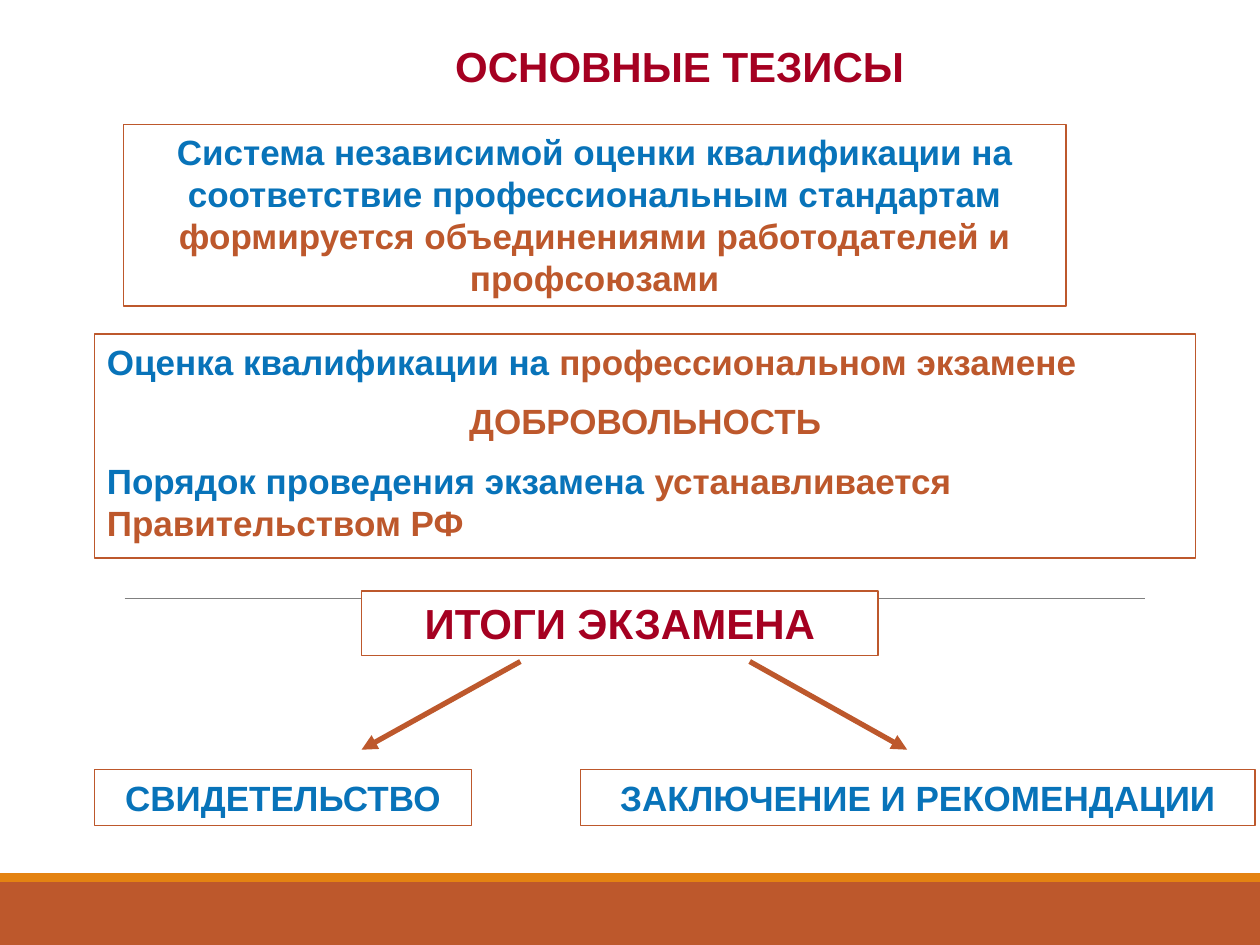
from dataclasses import dataclass
from typing import Optional

from lxml import etree
from pptx import Presentation
from pptx import util as u
from pptx.dml.color import RGBColor
from pptx.enum import shapes, text
from pptx.oxml.ns import qn

RUST, ORANGE, BLUE, CRIMSON = "BD582C", "E48312", "0873B9", "A50021"
WHITE, GREY = "FFFFFF", "808080"
LEFT, CENTER = text.PP_ALIGN.LEFT, text.PP_ALIGN.CENTER


@dataclass
class Thesis:
    runs: list[tuple[str, str]]
    align: text.PP_ALIGN = CENTER


@dataclass
class Box:
    at: tuple[float, float, float, float]
    theses: list[Thesis]
    size: int = 20
    fill: Optional[str] = None
    outline: Optional[str] = RUST


@dataclass
class Line:
    start: tuple[float, float]
    end: tuple[float, float]
    color: str = RUST
    width: float = 3
    arrow: bool = True


BANDS = [((0, 7, 10, 0.5), RUST), ((0, 6.93, 10, 0.07), ORANGE)]

RULE = Line((0.99, 4.75), (9.09, 4.75), GREY, 0.5, False)

BOXES = [
    Box((1.93, 0.27, 6.93, 0.5), [Thesis([("ОСНОВНЫЕ ТЕЗИСЫ", CRIMSON)])], 24, outline=None),
    Box((0.98, 0.99, 7.48, 1.44), [Thesis([
        ("Система независимой оценки квалификации на соответствие профессиональным стандартам ", BLUE),
        ("формируется объединениями работодателей и профсоюзами", RUST),
    ])]),
    Box((0.75, 2.65, 8.74, 1.78), [
        Thesis([("Оценка квалификации на ", BLUE), ("профессиональном экзамене", RUST)], LEFT),
        Thesis([("ДОБРОВОЛЬНОСТЬ", RUST)]),
        Thesis([("Порядок проведения экзамена ", BLUE), ("устанавливается Правительством РФ", RUST)], LEFT),
    ]),
    Box((2.87, 4.69, 4.1, 0.51), [Thesis([("ИТОГИ ЭКЗАМЕНА", CRIMSON)])], 24, fill=WHITE),
    Box((0.75, 6.11, 2.99, 0.44), [Thesis([("СВИДЕТЕЛЬСТВО", BLUE)])]),
    Box((4.61, 6.11, 5.35, 0.44), [Thesis([("ЗАКЛЮЧЕНИЕ И РЕКОМЕНДАЦИИ", BLUE)])]),
]

ARROWS = [Line((4.13, 5.25), (2.87, 5.95)), Line((5.95, 5.25), (7.2, 5.95))]


def paint(target, color: str) -> None:
    target.rgb = RGBColor.from_string(color)


def apply(target, values: dict) -> None:
    for name, value in values.items():
        setattr(target, name, value)


def draw_rectangle(slide, at: tuple, fill: Optional[str], outline: Optional[str]):
    rectangle = slide.shapes.add_shape(shapes.MSO_SHAPE.RECTANGLE, *map(u.Inches, at))
    rectangle.shadow.inherit = False
    for part, color in ((rectangle.fill, fill), (rectangle.line.fill, outline)):
        if color:
            part.solid()
            paint(part.fore_color, color)
        else:
            part.background()
    if outline:
        rectangle.line.width = u.Pt(0.75)
    return rectangle


def write_theses(frame, box: Box) -> None:
    apply(frame, {"word_wrap": True, "vertical_anchor": text.MSO_ANCHOR.TOP})
    for index, thesis in enumerate(box.theses):
        paragraph = frame.add_paragraph() if index else frame.paragraphs[0]
        apply(paragraph, {"alignment": thesis.align, "space_before": u.Pt(box.size / 2 if index else 0)})
        for words, color in thesis.runs:
            run = paragraph.add_run()
            run.text = words
            apply(run.font, {"name": "Arial", "size": u.Pt(box.size), "bold": True})
            paint(run.font.color, color)


def draw_box(slide, box: Box) -> None:
    if box.outline:
        holder = draw_rectangle(slide, box.at, box.fill, box.outline)
    else:
        holder = slide.shapes.add_textbox(*map(u.Inches, box.at))
    write_theses(holder.text_frame, box)


def draw_line(slide, line: Line) -> None:
    ends = map(u.Inches, line.start + line.end)
    connector = slide.shapes.add_connector(shapes.MSO_CONNECTOR.STRAIGHT, *ends)
    paint(connector.line.color, line.color)
    connector.line.width = u.Pt(line.width)
    properties = connector.element.spPr
    if line.arrow:
        etree.SubElement(properties.find(qn("a:ln")), qn("a:tailEnd"), type="triangle")
    etree.SubElement(properties, qn("a:effectLst"))


def main() -> None:
    deck = Presentation()
    apply(deck, {"slide_width": u.Inches(10), "slide_height": u.Inches(7.5)})
    slide = deck.slides.add_slide(deck.slide_layouts[6])
    for at, color in BANDS:
        draw_rectangle(slide, at, color, None)
    draw_line(slide, RULE)
    for box in BOXES:
        draw_box(slide, box)
    for arrow in ARROWS:
        draw_line(slide, arrow)
    deck.save("out.pptx")


if __name__ == "__main__":
    main()
